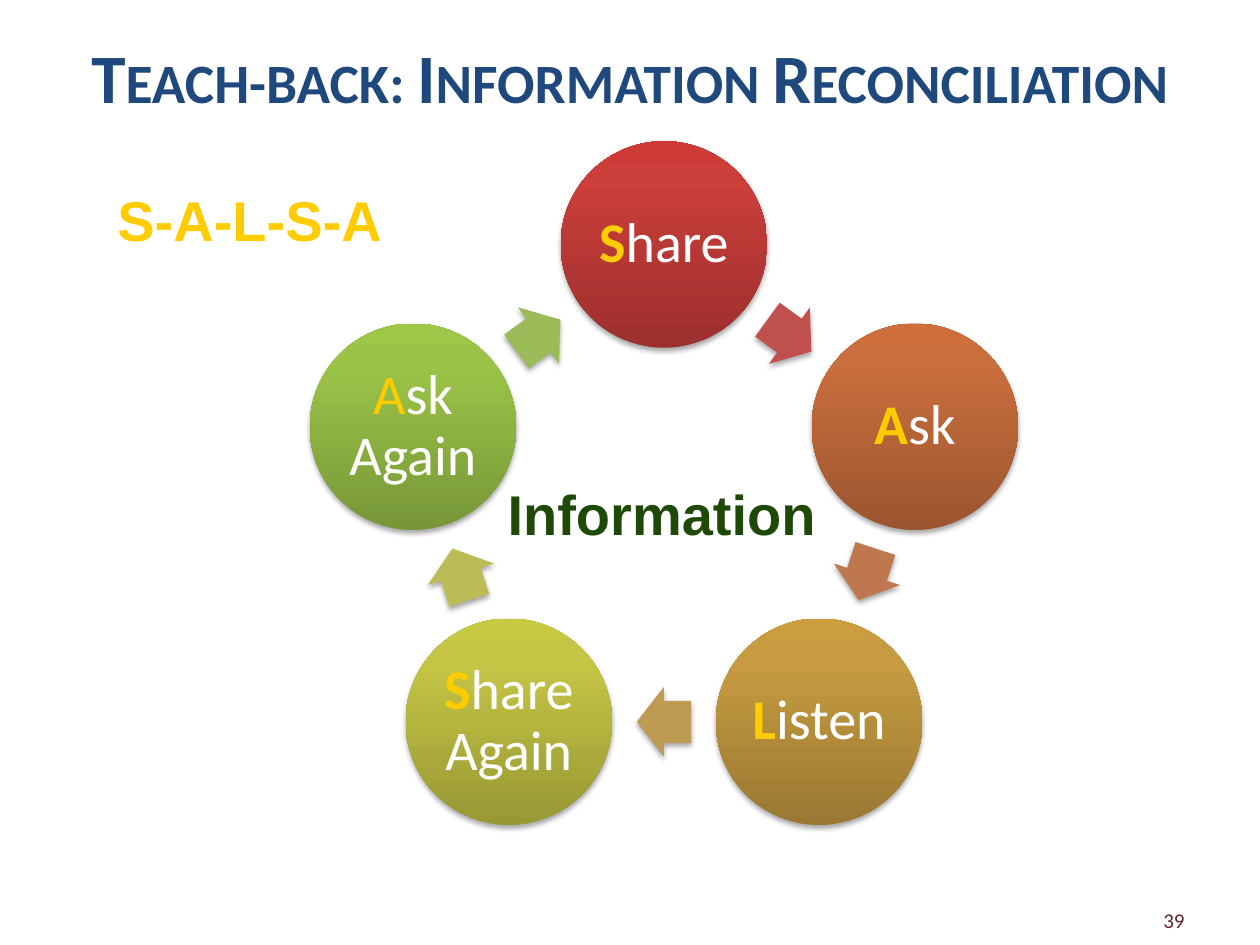
from copy import deepcopy
from dataclasses import dataclass
from math import cos, radians, sin

from lxml import etree
from pptx import Presentation
from pptx.dml.color import RGBColor
from pptx.enum import shapes, text
from pptx.oxml.ns import qn
from pptx.util import Pt


@dataclass(frozen=True)
class Theme:
    heading_font: str = "Calibri"
    label_font: str = "Arial"
    title: str = "1F497D"
    number: str = "632523"
    accent: str = "FFCC00"
    label: str = "1F4907"
    white: str = "FFFFFF"
    title_size: float = 39.6
    body_size: float = 32
    number_size: float = 12


T = Theme()
STEPS = [
    ("S", "hare", True, ("9C2F2D", "CB3E3A", "CE3B37"), "C0504D"),
    ("A", "sk", True, ("9B552F", "C96E3D", "CD6E3B"), "BF7750"),
    ("L", "isten", True, ("997832", "C79C41", "CB9D3F"), "BD9B53"),
    ("S", "hare Again", True, ("989835", "C5C545", "C8C942"), "BCBC56"),
    ("A", "sk Again", False, ("779737", "9BC348", "9DC746"), "9BBB59"),
]


def set_attrs(obj, **values):
    for name, value in values.items():
        setattr(obj, name, value)


def add_run(p, words, color, size, font=T.heading_font, bold=False):
    r = p.add_run()
    r.text = words
    set_attrs(r.font, name=font, size=Pt(size), bold=bold)
    r.font.color.rgb = RGBColor.from_string(color)
    return r


def add_text(slide, box, words, color, size, align=text.PP_ALIGN.LEFT,
             anchor=text.MSO_ANCHOR.TOP, wrap=True, **font):
    tf = slide.shapes.add_textbox(*map(Pt, box)).text_frame
    set_attrs(tf, word_wrap=wrap, vertical_anchor=anchor)
    if not wrap:
        tf.auto_size = text.MSO_AUTO_SIZE.SHAPE_TO_FIT_TEXT
    p = tf.paragraphs[0]
    p.alignment = align
    return add_run(p, words, color, size, **font)


def add_soft_shape(slide, kind, cx, cy, w, h):
    sp = slide.shapes.add_shape(kind, *map(Pt, (cx - w / 2, cy - h / 2, w, h)))
    sp.line.fill.background()
    sp.shadow.inherit = False
    effects = sp._element.spPr.find(qn("a:effectLst"))
    shadow = etree.SubElement(effects, qn("a:outerShdw"), blurRad=str(Pt(3.1)),
                              dist=str(Pt(1.8)), dir="5400000", rotWithShape="0")
    color = etree.SubElement(shadow, qn("a:srgbClr"), val="000000")
    etree.SubElement(color, qn("a:alpha"), val="35000")
    return sp


def fill_gradient(fill, colors):
    fill.gradient()
    fill.gradient_angle = 90
    first = fill.gradient_stops[0]._gs
    first.addnext(deepcopy(first))
    for stop, position, color in zip(fill.gradient_stops, (0, 0.8, 1), colors):
        stop.position = position
        stop.color.rgb = RGBColor.from_string(color)


def add_step(slide, cx, cy, size, initial, rest, bold, colors):
    sp = add_soft_shape(slide, shapes.MSO_SHAPE.OVAL, cx, cy, size, size)
    fill_gradient(sp.fill, colors)
    tf = sp.text_frame
    set_attrs(tf, word_wrap=True, vertical_anchor=text.MSO_ANCHOR.MIDDLE,
              **{f"margin_{side}": Pt(3) for side in ("left", "top", "right", "bottom")})
    p = tf.paragraphs[0]
    set_attrs(p, alignment=text.PP_ALIGN.CENTER, line_spacing=0.9)
    add_run(p, initial, T.accent, T.body_size, bold=bold)
    add_run(p, rest, T.white, T.body_size)


def add_arrow(slide, cx, cy, w, h, rotation, color):
    sp = add_soft_shape(slide, shapes.MSO_SHAPE.RIGHT_ARROW, cx, cy, w, h)
    sp.rotation = rotation
    sp.adjustments[0] = 0.6
    sp.adjustments[1] = 0.5
    sp.fill.solid()
    sp.fill.fore_color.rgb = RGBColor.from_string(color)


def add_cycle(slide, box):
    left, top, width, size = box
    radius = (width - size) / (2 * sin(radians(72)))
    cx, cy = left + width / 2, top + size / 2 + radius
    arrow_radius = radius * cos(radians(36))
    turn = 360 / len(STEPS)

    def around(r, degrees):
        return cx + r * sin(radians(degrees)), cy - r * cos(radians(degrees))

    for i, (initial, rest, bold, colors, arrow) in enumerate(STEPS):
        angle = i * turn
        add_step(slide, *around(radius, angle), size, initial, rest, bold, colors)
        middle = angle + turn / 2
        add_arrow(slide, *around(arrow_radius, middle), 31, 39.8, middle, arrow)


def add_title(slide, box):
    r = add_text(slide, box, "Teach-back: Information Reconciliation", T.title,
                 T.title_size, text.PP_ALIGN.CENTER, text.MSO_ANCHOR.MIDDLE, bold=True)
    r.font._element.set("cap", "small")


def add_label(slide, box, words, color):
    add_text(slide, box, words, color, T.body_size, wrap=False,
             font=T.label_font, bold=True)


def add_number(slide, box):
    add_text(slide, box, "39", T.number, T.number_size,
             text.PP_ALIGN.RIGHT, text.MSO_ANCHOR.MIDDLE)


def main():
    prs = Presentation()
    set_attrs(prs, slide_width=Pt(720), slide_height=Pt(540))
    slide = prs.slides.add_slide(prs.slide_layouts[6])
    add_title(slide, (36, 12.2, 648, 62.6))
    add_number(slide, (516, 511, 168, 29))
    add_cycle(slide, (177, 80.7, 404.8, 118))
    add_label(slide, (283, 270.7, 192, 46), "Information", T.label)
    add_label(slide, (60, 102.2, 167, 46), "S-A-L-S-A", T.accent)
    prs.save("out.pptx")


if __name__ == "__main__":
    main()
